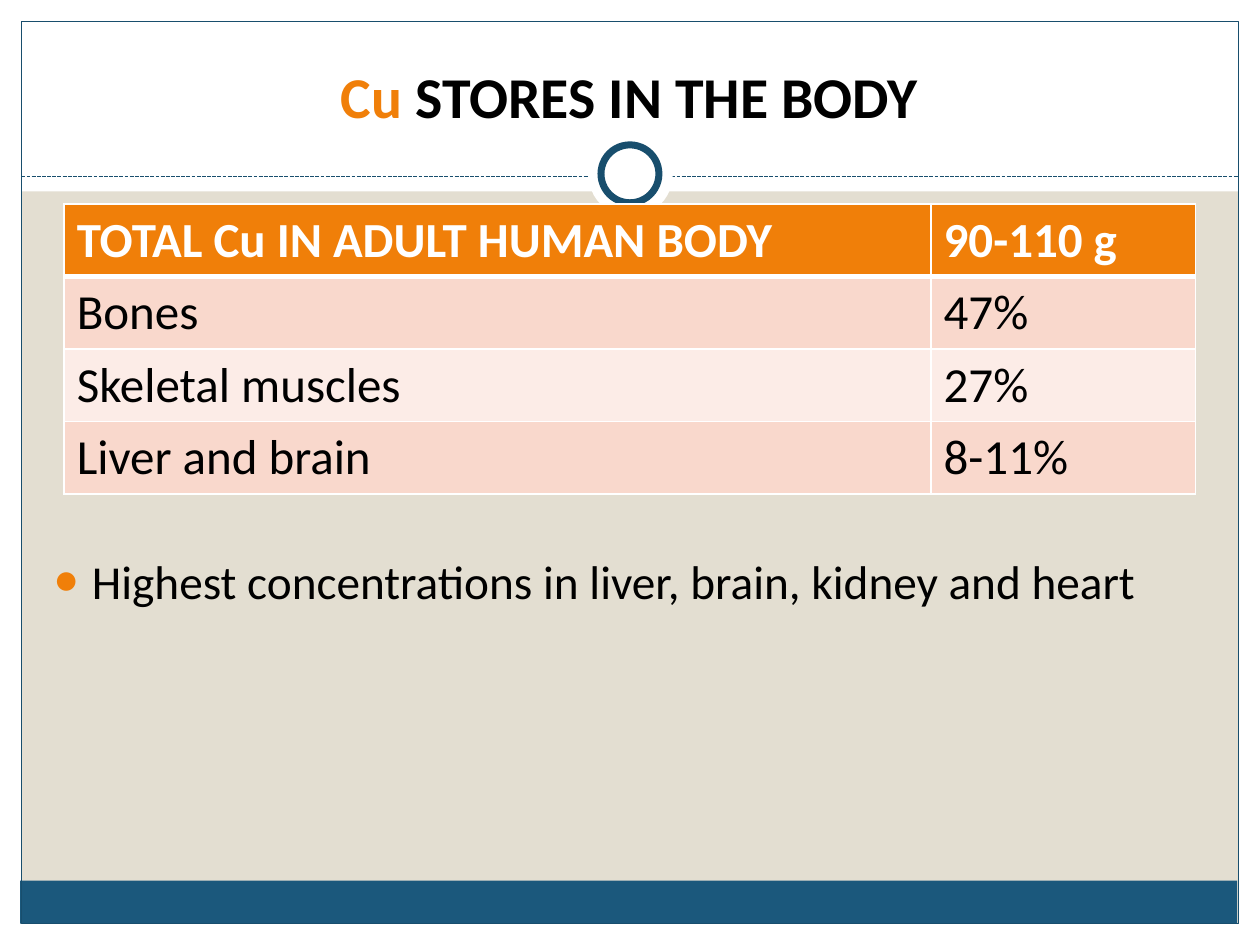
from dataclasses import dataclass

from lxml.etree import SubElement
from pptx import Presentation
from pptx.dml.color import RGBColor as RGB
from pptx.enum.dml import MSO_LINE as DASH
from pptx.enum.shapes import MSO_CONNECTOR as CONN, MSO_SHAPE as SHAPE
from pptx.enum.text import MSO_ANCHOR as ANCHOR, MSO_AUTO_SIZE as AUTO, PP_ALIGN as ALIGN
from pptx.oxml import parse_xml
from pptx.oxml.ns import nsdecls, qn
from pptx.util import Emu, Pt

EMU_PER_PX = 9144


def px(*lengths):
    return [Emu(n * EMU_PER_PX) for n in lengths]


@dataclass(frozen=True)
class Theme:
    font: str = "Calibri"
    paper: str = "E3DED1"
    white: str = "FFFFFF"
    black: str = "000000"
    accent: str = "F07F09"
    band: str = "1B587C"
    rule: str = "184E6D"
    rows: tuple = ("F9D8CC", "FCECE7")
    title_size: int = 33
    body_size: int = 27
    table_size: int = 28
    bullet_percent: int = 85


class SlideBuilder:
    def __init__(self, prs, theme):
        self.theme = theme
        self.slide = prs.slides.add_slide(prs.slide_layouts[1])
        self.shapes = self.slide.shapes
        fill = self.slide.background.fill
        fill.solid()
        fill.fore_color.rgb = RGB.from_string(theme.paper)

    def run(self, p, text, size, color, bold=False):
        r = p.add_run()
        r.text = text
        style = {"name": self.theme.font, "size": Pt(size), "bold": bold}
        for name, value in style.items():
            setattr(r.font, name, value)
        r.font.color.rgb = RGB.from_string(color)

    def shape(self, kind, box, fill=None, line=None, width=0.75):
        sp = self.shapes.add_shape(kind, *px(*box))
        sp.shadow.inherit = False
        if fill:
            sp.fill.solid()
            sp.fill.fore_color.rgb = RGB.from_string(fill)
        else:
            sp.fill.background()
        if line:
            sp.line.color.rgb = RGB.from_string(line)
            sp.line.width = Pt(width)
        else:
            sp.line.fill.background()

    def dashed_line(self, start, end):
        cxn = self.shapes.add_connector(CONN.STRAIGHT, *px(*start, *end))
        cxn.line.color.rgb = RGB.from_string(self.theme.rule)
        cxn.line.width = Pt(0.75)
        cxn.line.dash_style = DASH.SQUARE_DOT
        SubElement(cxn.element.spPr, qn("a:effectLst"))

    def placeholder(self, sp, box, frame):
        self.shapes.element.append(sp.element)
        sp.left, sp.top, sp.width, sp.height = px(*box)
        for name, value in frame.items():
            setattr(sp.text_frame, name, value)
        return sp.text_frame.paragraphs[0]

    def title(self, box, parts):
        frame = {"auto_size": AUTO.NONE, "vertical_anchor": ANCHOR.BOTTOM}
        p = self.placeholder(self.shapes.title, box, frame)
        p.alignment = ALIGN.CENTER
        for text, color in parts:
            self.run(p, text, self.theme.title_size, color, bold=True)

    def bullet(self, box, text, drop, indent):
        t = self.theme
        frame = {"auto_size": AUTO.NONE, "vertical_anchor": ANCHOR.TOP, "margin_top": px(drop)[0]}
        p = self.placeholder(self.slide.placeholders[1], box, frame)
        p.space_before = Pt(0)
        self.run(p, text, t.body_size, t.black)
        pPr = p._p.get_or_add_pPr()
        step = px(indent)[0]
        pPr.set("marL", str(step))
        pPr.set("indent", str(-step))
        SubElement(SubElement(pPr, qn("a:buClr")), qn("a:srgbClr"), val=t.accent)
        SubElement(pPr, qn("a:buSzPct"), val=str(t.bullet_percent * 1000))
        SubElement(pPr, qn("a:buFont"), typeface=t.font)
        SubElement(pPr, qn("a:buChar"), char="●")

    def borders(self, cell, widths):
        tcPr = cell._tc.get_or_add_tcPr()
        for i, (side, width) in enumerate(widths.items()):
            tcPr.insert(i, parse_xml(
                f'<a:{side} {nsdecls("a")} w="{Pt(width)}"><a:solidFill>'
                f'<a:srgbClr val="{self.theme.white}"/></a:solidFill></a:{side}>'))

    def table(self, left, top, col_widths, row_height, rows):
        t = self.theme
        box = px(left, top, sum(col_widths), row_height * len(rows))
        tbl = self.shapes.add_table(len(rows), len(col_widths), *box).table
        for col, width in zip(tbl.columns, px(*col_widths)):
            col.width = width
        for i, row in enumerate(rows):
            header = i == 0
            fill = t.accent if header else t.rows[(i - 1) % 2]
            color = t.white if header else t.black
            widths = {"lnL": 1, "lnR": 1, "lnT": 3 if i == 1 else 1, "lnB": 3 if header else 1}
            for j, text in enumerate(row):
                cell = tbl.cell(i, j)
                cell.fill.solid()
                cell.fill.fore_color.rgb = RGB.from_string(fill)
                self.borders(cell, widths)
                self.run(cell.text_frame.paragraphs[0], text, t.table_size, color, header)


def main():
    prs = Presentation()
    prs.slide_width, prs.slide_height = px(1000, 750)
    t = Theme()
    s = SlideBuilder(prs, t)

    margins = [(0, 733, 1000, 17), (0, 0, 1000, 152), (0, 0, 17, 750), (983, 0, 17, 750)]
    for box in margins:
        s.shape(SHAPE.RECTANGLE, box, fill=t.white)
    s.shape(SHAPE.RECTANGLE, (16, 699, 966, 34), fill=t.band)
    s.shape(SHAPE.RECTANGLE, (17, 17, 966, 716), line=t.rule)
    s.dashed_line((17, 140), (983, 140))
    s.shape(SHAPE.OVAL, (467, 105, 67, 67), fill=t.white)
    s.shape(SHAPE.OVAL, (477, 115, 46, 46), fill=t.white, line=t.rule, width=4)

    s.title((33, 25, 933, 83), [("Cu", t.accent), (" STORES IN THE BODY", t.black)])
    s.bullet((33, 167, 930, 500), "Highest concentrations in liver, brain, kidney and heart",
             drop=271, indent=30)
    s.table(51, 162, (688, 210), 57, [
        ("TOTAL Cu IN ADULT HUMAN BODY", "90-110 g"),
        ("Bones", "47%"),
        ("Skeletal muscles", "27%"),
        ("Liver and brain", "8-11%"),
    ])
    prs.save("out.pptx")


if __name__ == "__main__":
    main()
